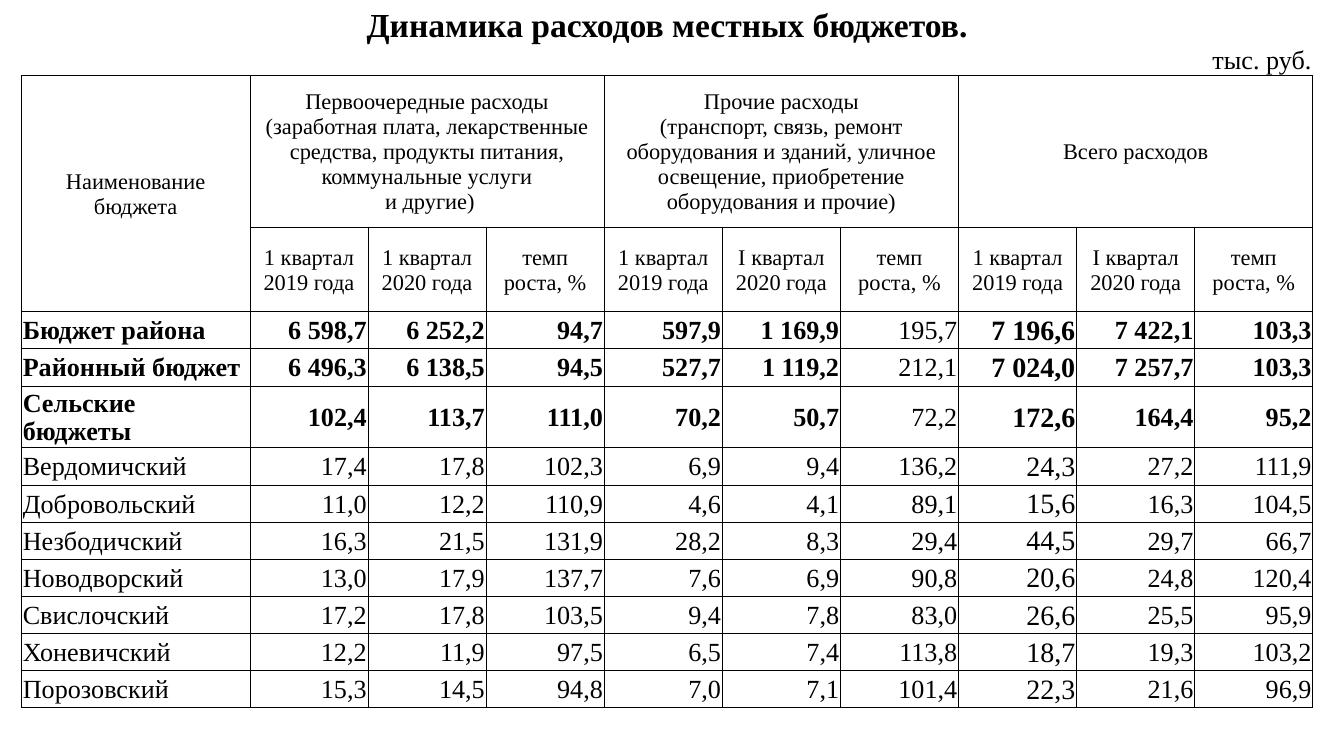
from dataclasses import dataclass

from lxml.etree import SubElement
from pptx import Presentation
from pptx.dml.color import RGBColor
from pptx.enum.text import MSO_ANCHOR as Anchor, PP_ALIGN as Align
from pptx.oxml.ns import qn
from pptx.table import Table, _Cell as Cell
from pptx.util import Inches, Pt

COLORS = {"text": "000000", "border": "000000"}
FONT = "Times New Roman"
SLIDE_WIDTH = 10
SLIDE_HEIGHT = SLIDE_WIDTH * 9 / 16
TABLE_LEFT, TABLE_TOP, TABLE_WIDTH = 0.16, 0.03, 9.61
NAME_WIDTH = 1.7
VALUE_COLUMNS = 9
COLUMNS = 1 + VALUE_COLUMNS
HEADER_HEIGHTS = [0.3, 0.23, 1.13, 0.63]
BODY_TOP = len(HEADER_HEIGHTS)
ROW_HEIGHT, TALL_ROW_HEIGHT = 2.49 / 9, 0.46
UNIT_ROW, GROUP_ROW, PERIOD_ROW = 1, 2, 3
GROWTH_OTHER_COLUMN, TOTAL_2019_COLUMN = 6, 7
EDGES = ("lnL", "lnR", "lnT", "lnB")
MARGINS = {"margin_left": 0.01, "margin_right": 0.01, "margin_top": 0.01, "margin_bottom": 0}


@dataclass(frozen=True)
class Style:
    size: float
    align: Align = Align.CENTER
    bold: bool = False
    anchor: Anchor = Anchor.MIDDLE


@dataclass(frozen=True)
class Budget:
    name: str
    values: str
    bold: bool = False
    height: float = ROW_HEIGHT


@dataclass(frozen=True)
class Group:
    title: str
    periods: tuple[str, ...]


GROWTH = "темп\nроста, %"
MIXED_PERIODS = ("1 квартал 2019 года", "I квартал 2020 года", GROWTH)
GROUPS = [
    Group("Первоочередные расходы (заработная плата, лекарственные средства, "
          "продукты питания, коммунальные услуги\n и другие)",
          ("1 квартал\n2019 года", "1 квартал\n2020 года", GROWTH)),
    Group("Прочие расходы\n(транспорт, связь, ремонт оборудования и зданий, уличное "
          "освещение, приобретение оборудования и прочие)", MIXED_PERIODS),
    Group("Всего расходов", MIXED_PERIODS),
]
BUDGETS = [
    Budget("Бюджет района",
           "6 598,7|6 252,2|94,7|597,9|1 169,9|195,7|7 196,6|7 422,1|103,3", True),
    Budget("Районный бюджет",
           "6 496,3|6 138,5|94,5|527,7|1 119,2|212,1|7 024,0|7 257,7|103,3", True),
    Budget("Сельские бюджеты",
           "102,4|113,7|111,0|70,2|50,7|72,2|172,6|164,4|95,2", True, TALL_ROW_HEIGHT),
    Budget("Вердомичский", "17,4|17,8|102,3|6,9|9,4|136,2|24,3|27,2|111,9"),
    Budget("Добровольский", "11,0|12,2|110,9|4,6|4,1|89,1|15,6|16,3|104,5"),
    Budget("Незбодичский", "16,3|21,5|131,9|28,2|8,3|29,4|44,5|29,7|66,7"),
    Budget("Новодворский", "13,0|17,9|137,7|7,6|6,9|90,8|20,6|24,8|120,4"),
    Budget("Свислочский", "17,2|17,8|103,5|9,4|7,8|83,0|26,6|25,5|95,9"),
    Budget("Хоневичский", "12,2|11,9|97,5|6,5|7,4|113,8|18,7|19,3|103,2"),
    Budget("Порозовский", "15,3|14,5|94,8|7,0|7,1|101,4|22,3|21,6|96,9"),
]
HEADER_STYLE = Style(12)


def write(cell: Cell, text: str, style: Style) -> None:
    cell.vertical_anchor = style.anchor
    cell.text_frame.text = text
    for paragraph in cell.text_frame.paragraphs:
        paragraph.alignment = style.align
        font = paragraph.runs[0].font
        formats = {"name": FONT, "size": Pt(style.size), "bold": style.bold}
        for name, value in formats.items():
            setattr(font, name, value)
        font.color.rgb = RGBColor.from_string(COLORS["text"])


def set_borders(cell: Cell, visible: tuple[str, ...]) -> None:
    properties = cell._tc.get_or_add_tcPr()
    for edge in EDGES:
        line = SubElement(properties, qn(f"a:{edge}"), w=str(Pt(0.5)))
        if edge in visible:
            fill = SubElement(line, qn("a:solidFill"))
            SubElement(fill, qn("a:srgbClr"), val=COLORS["border"])
        else:
            SubElement(line, qn("a:noFill"))


def prepare_cells(table: Table) -> None:
    """Give every cell its margins, borders, clear fill and a small empty line."""
    for row_index, row in enumerate(table.rows):
        visible = () if row_index < UNIT_ROW else ("lnB",) if row_index == UNIT_ROW else EDGES
        for cell in row.cells:
            set_borders(cell, visible)
            cell.fill.background()
            for name, inches in MARGINS.items():
                setattr(cell, name, Inches(inches))
            SubElement(cell.text_frame.paragraphs[0]._p, qn("a:endParaRPr"), sz="1000")


def merge(table: Table, row: int, column: int, rows: int = 1, columns: int = 1) -> Cell:
    cell = table.cell(row, column)
    cell.merge(table.cell(row + rows - 1, column + columns - 1))
    return cell


def fill_header(table: Table) -> None:
    write(merge(table, 0, 0, columns=COLUMNS), "Динамика расходов местных бюджетов.",
          Style(18, bold=True, anchor=Anchor.BOTTOM))
    for column in (1, 3, 5):
        merge(table, UNIT_ROW, column, columns=2)
    write(table.cell(UNIT_ROW, COLUMNS - 1), "тыс. руб.",
          Style(14, Align.RIGHT, anchor=Anchor.BOTTOM))
    write(merge(table, GROUP_ROW, 0, rows=2), "Наименование бюджета", HEADER_STYLE)
    for index, group in enumerate(GROUPS):
        first = 1 + index * len(group.periods)
        write(merge(table, GROUP_ROW, first, columns=len(group.periods)),
              group.title, HEADER_STYLE)
        for column, period in enumerate(group.periods, first):
            write(table.cell(PERIOD_ROW, column), period, HEADER_STYLE)


def fill_budget(table: Table, row: int, budget: Budget) -> None:
    write(table.cell(row, 0), budget.name, Style(14, Align.LEFT, budget.bold))
    for column, value in enumerate(budget.values.split("|"), 1):
        size = 15 if column == TOTAL_2019_COLUMN else 14
        bold = budget.bold and column != GROWTH_OTHER_COLUMN
        write(table.cell(row, column), value, Style(size, Align.RIGHT, bold))


def main() -> None:
    presentation = Presentation()
    presentation.slide_width = Inches(SLIDE_WIDTH)
    presentation.slide_height = Inches(SLIDE_HEIGHT)
    slide = presentation.slides.add_slide(presentation.slide_layouts[6])

    heights = HEADER_HEIGHTS + [budget.height for budget in BUDGETS]
    value_width = (TABLE_WIDTH - NAME_WIDTH) / VALUE_COLUMNS
    table = slide.shapes.add_table(
        len(heights), COLUMNS, Inches(TABLE_LEFT), Inches(TABLE_TOP),
        Inches(TABLE_WIDTH), Inches(sum(heights))).table
    table.first_row = table.horz_banding = False
    for row, height in zip(table.rows, heights):
        row.height = Inches(height)
    for index, column in enumerate(table.columns):
        column.width = Inches(value_width if index else NAME_WIDTH)

    prepare_cells(table)
    fill_header(table)
    for row, budget in enumerate(BUDGETS, BODY_TOP):
        fill_budget(table, row, budget)
    presentation.save("out.pptx")


if __name__ == "__main__":
    main()
